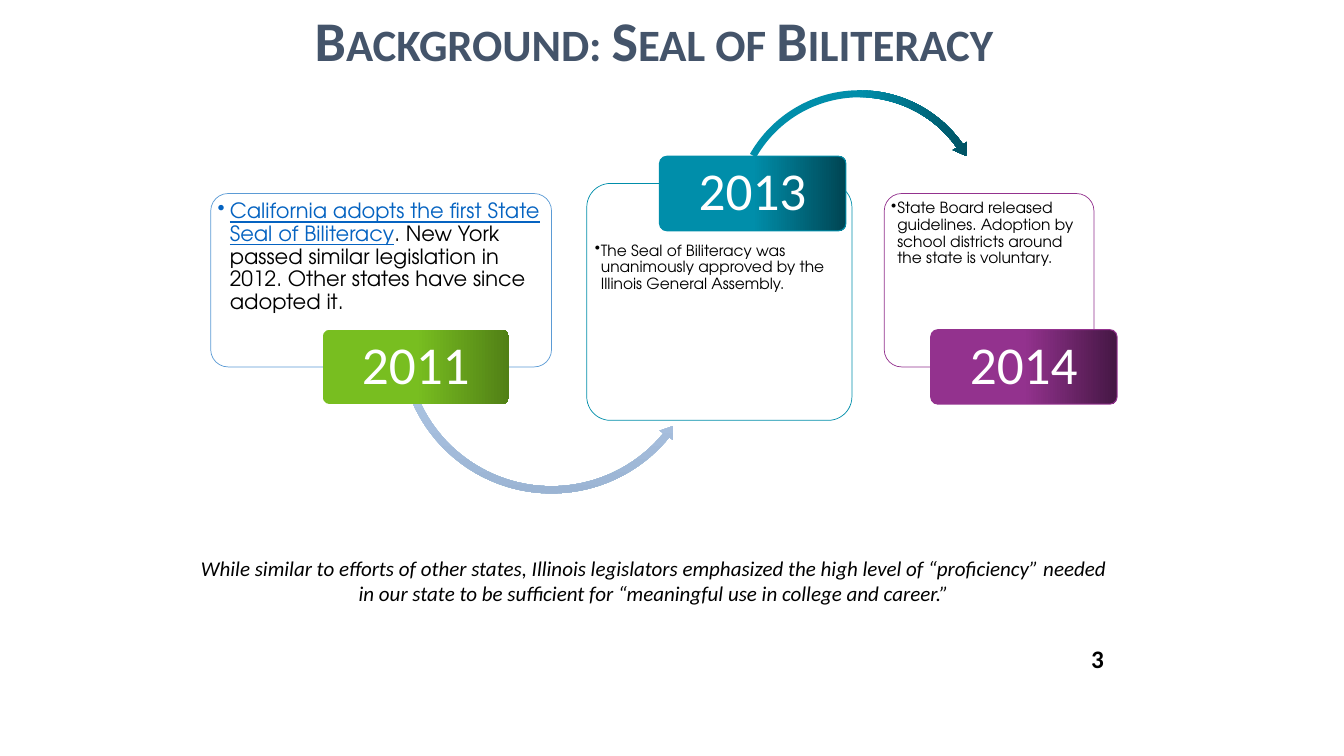
import copy

import pptx
import pptx.dml.color
import pptx.enum.shapes
import pptx.enum.text
import pptx.oxml.ns
import pptx.util
from lxml import etree

Inches, Pt = pptx.util.Inches, pptx.util.Pt
RGBColor = pptx.dml.color.RGBColor
MSO_SHAPE = pptx.enum.shapes.MSO_SHAPE
ANCHOR = pptx.enum.text.MSO_ANCHOR
CENTER = pptx.enum.text.PP_ALIGN.CENTER
qn = pptx.oxml.ns.qn

BLACK = RGBColor(0x00, 0x00, 0x00)
WHITE = RGBColor(0xFF, 0xFF, 0xFF)
SLATE = RGBColor(0x44, 0x54, 0x6A)
LINK_BLUE = RGBColor(0x05, 0x63, 0xC1)
SKY = RGBColor(0x5B, 0x9B, 0xD5)
GREEN, DARK_GREEN = RGBColor(0x78, 0xBE, 0x20), RGBColor(0x51, 0x80, 0x16)
TEAL, DARK_TEAL = RGBColor(0x00, 0x8E, 0xAA), RGBColor(0x00, 0x45, 0x53)
PURPLE, DARK_PURPLE = RGBColor(0x93, 0x32, 0x8E), RGBColor(0x45, 0x17, 0x44)
PALE_BLUES = (RGBColor(0xC0, 0xD2, 0xEB), RGBColor(0xB3, 0xCB, 0xE9),
              RGBColor(0x9B, 0xB4, 0xD3))
BODY_FONT, CARD_FONT = "Calibri", "TeX Gyre Adventor"

# Content
TITLE = "Background: Seal of Biliteracy"
CLOSING = ("While similar to efforts of other states, Illinois legislators emphasized "
           "the high level of “proficiency” needed in our state to be sufficient for "
           "“meaningful use in college and career.”")
PAGE_NUMBER = "3"
# Boxes are left, top, width, height in inches
MILESTONES = [
    {"year": "2011", "card": (2.09, 1.92, 3.38, 1.72), "border": SKY,
     "text_box": (2.13, 1.96, 3.3, 1.27), "size": 15, "indent": 0.12,
     "runs": [("California adopts the first State Seal of Biliteracy", LINK_BLUE, True),
              (". New York passed similar legislation in 2012. Other states have "
               "since adopted it.", BLACK, False)],
     "tile": (3.2, 3.27), "colors": (GREEN, GREEN, DARK_GREEN), "tile_border": None,
     "arrow": {"kind": MSO_SHAPE.LEFT_CIRCULAR_ARROW, "box": (3.92, 1.84, 3.1, 3.1),
               "adjustments": (0.023, 2.713, 23.52, 93.297, 0.026),
               "colors": PALE_BLUES, "angle": 270}},
    {"year": "2013", "card": (5.82, 1.82, 2.63, 2.35), "border": TEAL,
     "text_box": (5.87, 2.38, 2.52, 1.74), "size": 11, "indent": 0.06,
     "runs": [("The Seal of Biliteracy was unanimously approved by the Illinois "
               "General Assembly.", BLACK, False)],
     "tile": (6.54, 1.55), "colors": (TEAL, TEAL, DARK_TEAL), "tile_border": TEAL,
     "arrow": {"kind": MSO_SHAPE.CIRCULAR_ARROW, "box": (7.23, 0.85, 2.59, 2.59),
               "adjustments": (0.027, 3.276, 195.006, 125.792, 0.031),
               "colors": (TEAL, TEAL, DARK_TEAL), "angle": 0}},
    {"year": "2014", "card": (8.77, 1.92, 2.08, 1.72), "border": PURPLE,
     "text_box": (8.81, 1.96, 2, 1.27), "size": 11, "indent": 0.06,
     "runs": [("State Board released guidelines. Adoption by school districts around "
               "the state is voluntary.", BLACK, False)],
     "tile": (9.23, 3.27), "colors": (PURPLE, PURPLE, DARK_PURPLE),
     "tile_border": PURPLE, "arrow": None},
]
TILE_SIZE = (1.85, 0.74)


def set_all(target, values):
    for name, value in values.items():
        setattr(target, name, value)


def add_run(paragraph, text, size, color, font=BODY_FONT, **extra):
    run = paragraph.add_run()
    run.text = text
    set_all(run.font, {"size": Pt(size), "name": font, **extra})
    run.font.color.rgb = color
    return run


def set_insets(frame, horizontal, vertical):
    set_all(frame, {"margin_left": Inches(horizontal), "margin_right": Inches(horizontal),
                    "margin_top": Inches(vertical), "margin_bottom": Inches(vertical)})


def add_text_box(slide, box):
    frame = slide.shapes.add_textbox(*map(Inches, box)).text_frame
    frame.word_wrap = True
    return frame


def add_shape(slide, kind, box, adjustments, border=None, border_width=0.75):
    shape = slide.shapes.add_shape(kind, *map(Inches, box))
    shape.shadow.inherit = False
    for index, value in enumerate(adjustments):
        shape.adjustments[index] = value
    if border is None:
        shape.line.fill.background()
    else:
        shape.line.color.rgb = border
        shape.line.width = Pt(border_width)
    return shape


def fill_gradient(shape, colors, angle=0):
    shape.fill.gradient()
    shape.fill.gradient_angle = angle
    stop_list = shape._element.spPr.find(".//" + qn("a:gsLst"))
    stop_list.append(copy.deepcopy(stop_list[-1]))
    for stop, color, position in zip(shape.fill.gradient_stops, colors, (0, 0.5, 1)):
        stop.color.rgb = color
        stop.position = position


def add_card(slide, milestone):
    card = add_shape(slide, MSO_SHAPE.ROUNDED_RECTANGLE, milestone["card"], (0.1,),
                     milestone["border"], 0.5)
    card.fill.solid()
    card.fill.fore_color.rgb = WHITE
    fill_color = card._element.spPr.find(qn("a:solidFill"))[0]
    etree.SubElement(fill_color, qn("a:alpha"), val="90000")

    frame = add_text_box(slide, milestone["text_box"])
    set_insets(frame, 0.03, 0.03)
    paragraph = frame.paragraphs[0]
    paragraph.line_spacing = 0.9
    properties = paragraph._p.get_or_add_pPr()
    indent = Inches(milestone["indent"])
    properties.set("marL", str(indent))
    properties.set("indent", str(-indent))
    etree.SubElement(properties, qn("a:buChar"), char="•")
    for text, color, underline in milestone["runs"]:
        add_run(paragraph, text, milestone["size"], color, CARD_FONT, underline=underline)


def add_arrow(slide, arrow):
    shape = add_shape(slide, arrow["kind"], arrow["box"], arrow["adjustments"])
    fill_gradient(shape, arrow["colors"], arrow["angle"])


def add_year_tile(slide, milestone):
    tile = add_shape(slide, MSO_SHAPE.ROUNDED_RECTANGLE, milestone["tile"] + TILE_SIZE,
                     (0.1,), milestone["tile_border"])
    fill_gradient(tile, milestone["colors"])
    frame = tile.text_frame
    set_insets(frame, 0.08, 0.05)
    frame.vertical_anchor = ANCHOR.MIDDLE
    set_all(frame.paragraphs[0], {"alignment": CENTER, "line_spacing": 0.9})
    add_run(frame.paragraphs[0], milestone["year"], 38, WHITE)


def main():
    presentation = pptx.Presentation()
    presentation.slide_width = Inches(13.33)
    presentation.slide_height = Inches(7.5)
    slide = presentation.slides.add_slide(presentation.slide_layouts[5])

    # Title
    title = slide.shapes.title
    set_all(title, {"left": Inches(1.82), "top": Inches(0),
                    "width": Inches(9.33), "height": Inches(1.25)})
    set_all(title.text_frame, {"vertical_anchor": ANCHOR.TOP, "word_wrap": True,
                               "auto_size": pptx.enum.text.MSO_AUTO_SIZE.NONE})
    paragraph = title.text_frame.paragraphs[0]
    paragraph.alignment = CENTER
    run = add_run(paragraph, TITLE, 40, SLATE, bold=True)
    run._r.get_or_add_rPr().set("cap", "small")

    # Timeline
    for milestone in MILESTONES:
        add_card(slide, milestone)
        if milestone["arrow"]:
            add_arrow(slide, milestone["arrow"])
        add_year_tile(slide, milestone)

    # Closing statement and page number
    paragraph = add_text_box(slide, (1.82, 5.46, 9.33, 1.75)).paragraphs[0]
    paragraph.alignment = CENTER
    add_run(paragraph, CLOSING, 15, BLACK, italic=True)

    frame = add_text_box(slide, (10.58, 6.33, 0.61, 0.4))
    frame.vertical_anchor = ANCHOR.MIDDLE
    frame.paragraphs[0].alignment = CENTER
    add_run(frame.paragraphs[0], PAGE_NUMBER, 18, BLACK, bold=True)

    presentation.save("out.pptx")


if __name__ == "__main__":
    main()
